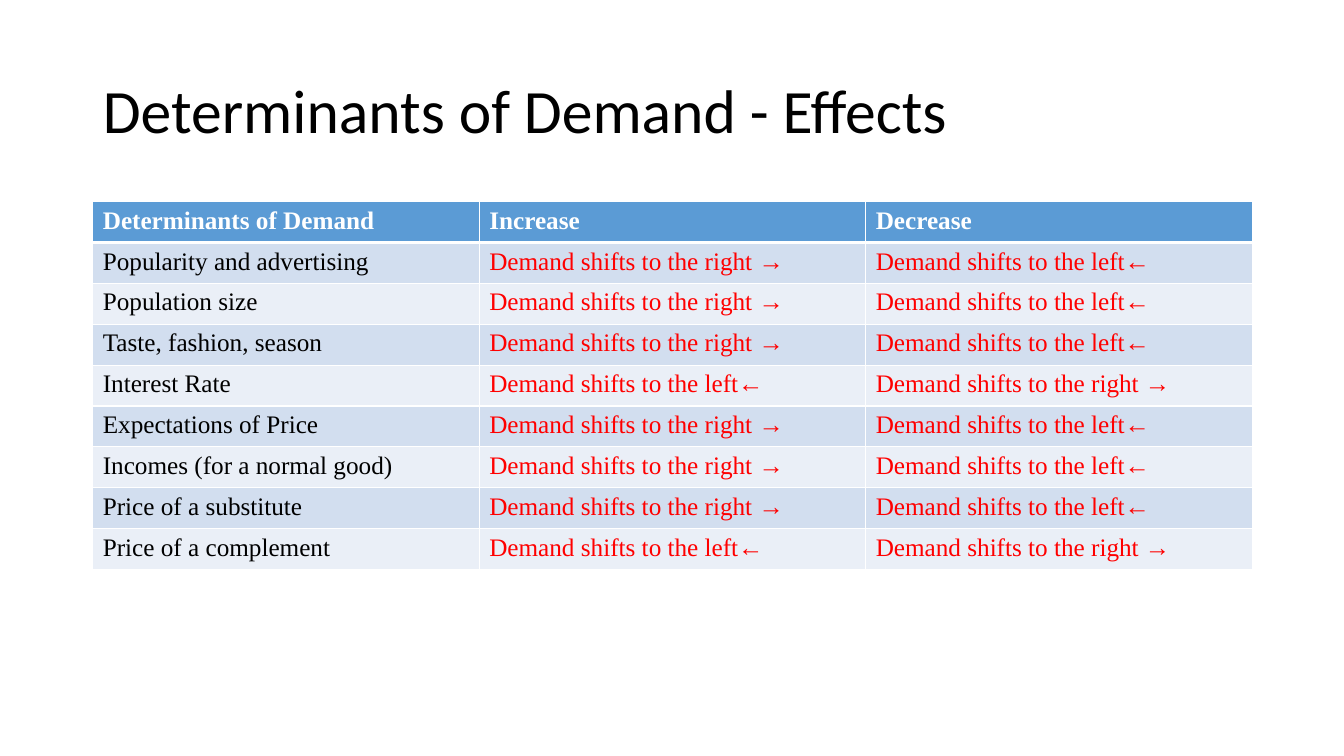
from lxml import etree
from pptx import Presentation
from pptx.dml.color import RGBColor
from pptx.enum.text import MSO_ANCHOR, MSO_AUTO_SIZE, PP_ALIGN
from pptx.oxml.ns import qn
from pptx.util import Inches, Pt

MIDDLE = MSO_ANCHOR.MIDDLE
NO_AUTOFIT = MSO_AUTO_SIZE.NONE
LEFT = PP_ALIGN.LEFT
TITLE_ONLY = 5

COLOURS = {
    "text": "000000",
    "effect": "FF0000",
    "header_text": "FFFFFF",
    "header_fill": "5B9BD5",
    "odd_row": "D2DEEF",
    "even_row": "EAEFF7",
    "border": "FFFFFF",
}
TITLE_FONT = "Calibri"
TABLE_FONT = "Times New Roman"

RIGHT_SHIFT = "Demand shifts to the right →"
LEFT_SHIFT = "Demand shifts to the left←"
HEADERS = ("Determinants of Demand", "Increase", "Decrease")
# Each determinant, and whether an increase in it raises demand
DETERMINANTS = (
    ("Popularity and advertising", True),
    ("Population size", True),
    ("Taste, fashion, season", True),
    ("Interest Rate", False),
    ("Expectations of Price", True),
    ("Incomes (for a normal good)", True),
    ("Price of a substitute", True),
    ("Price of a complement", False),
)


def rgb(name):
    return RGBColor.from_string(COLOURS[name])


def add_run(paragraph, text, font_name, size, colour, bold=False):
    run = paragraph.add_run()
    run.text = text
    run.font.name = font_name
    run.font.size = Pt(size)
    run.font.bold = bold
    run.font.color.rgb = rgb(colour)


def set_borders(cell, top, bottom):
    """Draw the four cell borders; widths are in points."""
    properties = cell._tc.get_or_add_tcPr()
    for side, width in (("L", 1), ("R", 1), ("T", top), ("B", bottom)):
        line = etree.SubElement(properties, qn(f"a:ln{side}"), w=str(Pt(width)))
        fill = etree.SubElement(line, qn("a:solidFill"))
        etree.SubElement(fill, qn("a:srgbClr"), val=COLOURS["border"])


def add_title(slide, left, top, width, height):
    title = slide.shapes.title
    title.left, title.top = Inches(left), Inches(top)
    title.width, title.height = Inches(width), Inches(height)
    frame = title.text_frame
    frame.auto_size = NO_AUTOFIT
    frame.word_wrap = True
    frame.vertical_anchor = MIDDLE
    paragraph = frame.paragraphs[0]
    paragraph.alignment = LEFT
    paragraph.line_spacing = 0.9
    add_run(paragraph, "Determinants of Demand - Effects", TITLE_FONT, 44, "text")


def add_effects_table(slide, left, top, width, height):
    rows = [HEADERS]
    for determinant, raises_demand in DETERMINANTS:
        shifts = (RIGHT_SHIFT, LEFT_SHIFT) if raises_demand else (LEFT_SHIFT, RIGHT_SHIFT)
        rows.append((determinant, *shifts))

    table = slide.shapes.add_table(
        len(rows), len(HEADERS),
        Inches(left), Inches(top), Inches(width), Inches(height)).table

    for row_index, texts in enumerate(rows):
        is_header = row_index == 0
        row_fill = "header_fill" if is_header else ("even_row", "odd_row")[row_index % 2]
        for column_index, text in enumerate(texts):
            cell = table.cell(row_index, column_index)
            set_borders(cell, top=3 if row_index == 1 else 1, bottom=3 if is_header else 1)
            cell.fill.solid()
            cell.fill.fore_color.rgb = rgb(row_fill)
            if is_header:
                colour = "header_text"
            else:
                colour = "text" if column_index == 0 else "effect"
            add_run(cell.text_frame.paragraphs[0], text, TABLE_FONT, 18, colour, is_header)


def main():
    presentation = Presentation()
    presentation.slide_width = Inches(13.33)
    presentation.slide_height = Inches(7.5)
    slide = presentation.slides.add_slide(presentation.slide_layouts[TITLE_ONLY])
    add_title(slide, 0.92, 0.4, 11.5, 1.45)
    add_effects_table(slide, 0.92, 2, 11.5, 3.65)
    presentation.save("out.pptx")


if __name__ == "__main__":
    main()
